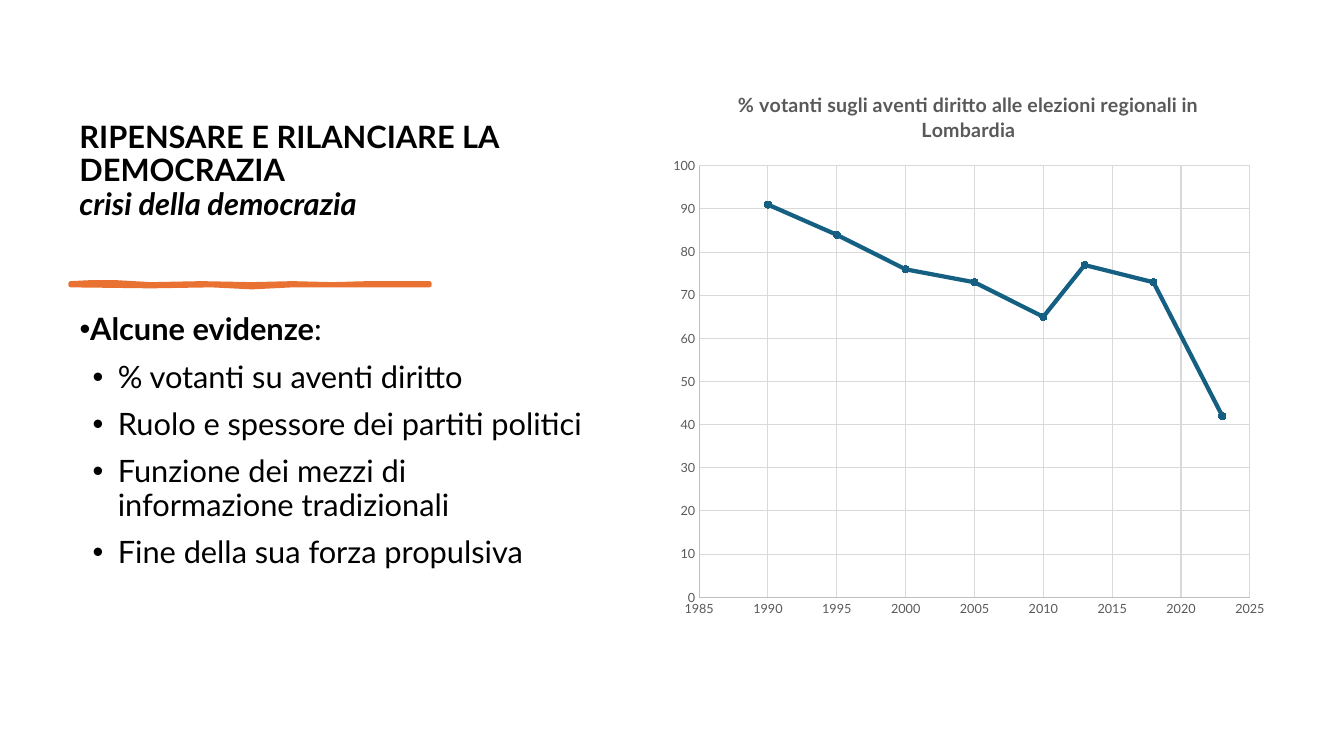
from lxml import etree
from pptx import Presentation
from pptx.chart.data import XyChartData
from pptx.dml.color import RGBColor
from pptx.enum.chart import XL_CHART_TYPE, XL_MARKER_STYLE, XL_TICK_MARK
from pptx.enum.text import MSO_ANCHOR
from pptx.oxml.ns import qn
from pptx.util import Inches, Pt

SCATTER_LINES = XL_CHART_TYPE.XY_SCATTER_LINES
CIRCLE = XL_MARKER_STYLE.CIRCLE
NO_TICK = XL_TICK_MARK.NONE
TOP, BOTTOM = MSO_ANCHOR.TOP, MSO_ANCHOR.BOTTOM

BLACK = RGBColor(0x00, 0x00, 0x00)
ORANGE = RGBColor(0xE9, 0x71, 0x32)
TEAL = RGBColor(0x15, 0x60, 0x82)
LABEL_GREY = RGBColor(0x59, 0x59, 0x59)
AXIS_GREY = RGBColor(0xBF, 0xBF, 0xBF)
GRID_GREY = RGBColor(0xD9, 0xD9, 0xD9)
FONT = "Lato"

HEADING = "RIPENSARE E RILANCIARE LA DEMOCRAZIA"
SUBHEADING = "crisi della democrazia"
EVIDENCE_LABEL = "Alcune evidenze"
EVIDENCE = [
    "% votanti su aventi diritto",
    "Ruolo e spessore dei partiti politici",
    "Funzione dei mezzi di informazione tradizionali",
    "Fine della sua forza propulsiva",
]
TURNOUT_TITLE = "% votanti sugli aventi diritto alle elezioni regionali in Lombardia"
TURNOUT = [(1990, 91), (1995, 84), (2000, 76), (2005, 73),
           (2010, 65), (2013, 77), (2018, 73), (2023, 42)]
PLOT_LAYOUT = {"x": 0.06, "y": 0.17, "w": 0.9, "h": 0.77}
BRUSH_TOP = [(0.7, 2.81), (0.9, 2.8), (1.15, 2.8), (1.5, 2.82), (2, 2.81),
             (2.5, 2.82), (2.9, 2.81), (3.3, 2.82), (3.65, 2.81), (4.26, 2.81)]
BRUSH_BOTTOM = [(4.26, 2.83), (3.8, 2.83), (3.4, 2.83), (2.9, 2.83), (2.5, 2.85),
                (2.1, 2.83), (1.5, 2.84), (0.7, 2.83)]


def style_font(font, size, color, bold=False, italic=False):
    font.name = FONT
    font.size = Pt(size)
    font.bold = bold
    font.italic = italic
    font.color.rgb = color


def add_text_box(slide, left, top, width, height, anchor):
    box = slide.shapes.add_textbox(Inches(left), Inches(top), Inches(width), Inches(height))
    frame = box.text_frame
    frame.word_wrap = True
    frame.vertical_anchor = anchor
    return frame


def add_heading(slide):
    frame = add_text_box(slide, 0.69, 0.7, 5.33, 1.88, BOTTOM)
    frame.margin_bottom = Inches(0.38)
    frame.text = f"{HEADING}\n{SUBHEADING}"
    for paragraph, italic in zip(frame.paragraphs, (False, True)):
        paragraph.line_spacing = 0.9
        style_font(paragraph.runs[0].font, 22, BLACK, True, italic)


def add_brush_stroke(slide):
    start, *outline = [(Inches(x), Inches(y)) for x, y in BRUSH_TOP + BRUSH_BOTTOM]
    builder = slide.shapes.build_freeform(*start)
    builder.add_line_segments(outline)
    stroke = builder.convert_to_shape()
    stroke.shadow.inherit = False
    stroke.fill.solid()
    stroke.fill.fore_color.rgb = ORANGE
    stroke.line.color.rgb = ORANGE
    stroke.line.width = Pt(3)
    etree.SubElement(stroke.line._get_or_add_ln(), qn("a:round"))


def format_bullet(paragraph, margin):
    paragraph.line_spacing = 0.9
    paragraph.space_before = Pt(10)
    properties = paragraph._p.get_or_add_pPr()
    properties.set("marL", str(Inches(margin)))
    properties.set("indent", str(Inches(-0.25)))
    etree.SubElement(properties, qn("a:buFont")).set("typeface", "Arial")
    etree.SubElement(properties, qn("a:buChar")).set("char", "•")


def add_evidence(slide):
    frame = add_text_box(slide, 0.69, 3.07, 5.19, 3.73, TOP)
    frame.text = "\n".join([EVIDENCE_LABEL] + EVIDENCE)
    label, *points = frame.paragraphs
    label.add_run().text = ":"
    format_bullet(label, 0)
    for point in points:
        format_bullet(point, 0.38)
    for paragraph in frame.paragraphs:
        for run in paragraph.runs:
            style_font(run.font, 22, BLACK, run.text == EVIDENCE_LABEL)


def format_axis(axis, low, high, step):
    axis.minimum_scale = low
    axis.maximum_scale = high
    axis.major_unit = step
    axis.major_tick_mark = NO_TICK
    axis.minor_tick_mark = NO_TICK
    axis.has_major_gridlines = True
    style_font(axis.tick_labels.font, 9, LABEL_GREY)
    axis.tick_labels.number_format = "General"
    axis.tick_labels.number_format_is_linked = False
    for line, color in ((axis.format.line, AXIS_GREY),
                        (axis.major_gridlines.format.line, GRID_GREY)):
        line.color.rgb = color
        line.width = Pt(0.75)


def place_plot(chart):
    plot_area = chart.element.find(".//" + qn("c:plotArea"))
    for automatic in plot_area.findall(qn("c:layout")):
        plot_area.remove(automatic)
    layout = etree.Element(qn("c:layout"))
    plot_area.insert(0, layout)
    manual = etree.SubElement(layout, qn("c:manualLayout"))
    settings = {"layoutTarget": "inner", "xMode": "edge", "yMode": "edge", **PLOT_LAYOUT}
    for tag, value in settings.items():
        etree.SubElement(manual, qn(f"c:{tag}")).set("val", str(value))


def add_turnout_chart(slide):
    data = XyChartData()
    turnout = data.add_series(TURNOUT_TITLE)
    for year, percent in TURNOUT:
        turnout.add_data_point(year, percent)
    chart = slide.shapes.add_chart(SCATTER_LINES, Inches(6.57), Inches(0.7),
                                   Inches(6.07), Inches(5.56), data).chart
    style_font(chart.font, 10, BLACK)
    chart.has_legend = False
    chart.has_title = True
    title = chart.chart_title.text_frame
    title.text = TURNOUT_TITLE
    style_font(title.paragraphs[0].runs[0].font, 14, LABEL_GREY, True)
    format_axis(chart.category_axis, 1985, 2025, 5)
    format_axis(chart.value_axis, 0, 100, 10)
    place_plot(chart)

    plot = chart.plots[0]
    plot.vary_by_categories = False
    series = plot.series[0]
    series.smooth = False
    series.format.line.color.rgb = TEAL
    series.format.line.width = Pt(3)
    marker = series.marker
    marker.style = CIRCLE
    marker.size = 5
    marker.format.fill.solid()
    marker.format.fill.fore_color.rgb = TEAL
    marker.format.line.color.rgb = TEAL


def main():
    deck = Presentation()
    deck.slide_width = Inches(13.33)
    deck.slide_height = Inches(7.5)
    slide = deck.slides.add_slide(deck.slide_layouts[6])
    add_heading(slide)
    add_brush_stroke(slide)
    add_evidence(slide)
    add_turnout_chart(slide)
    deck.save("out.pptx")


if __name__ == "__main__":
    main()
